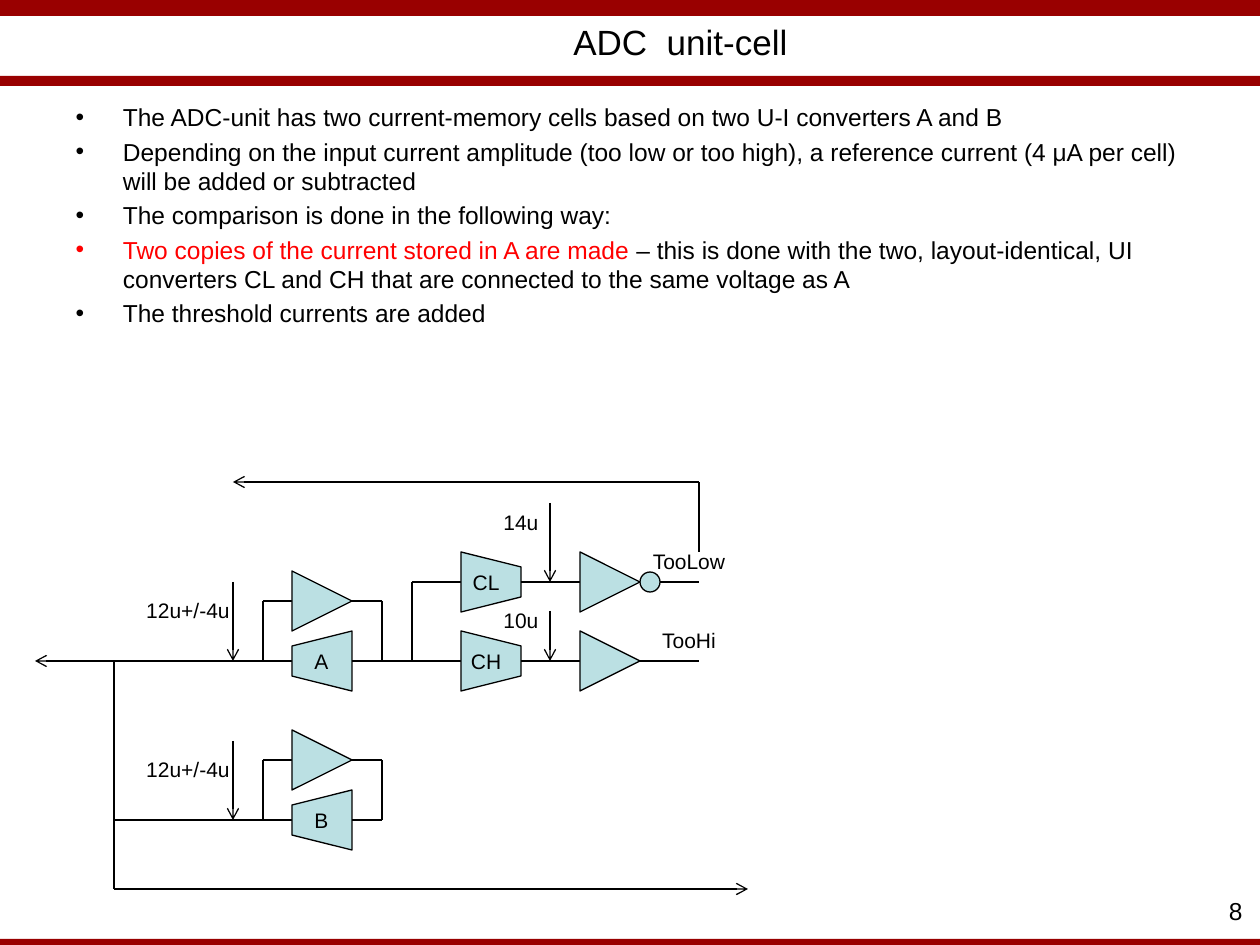
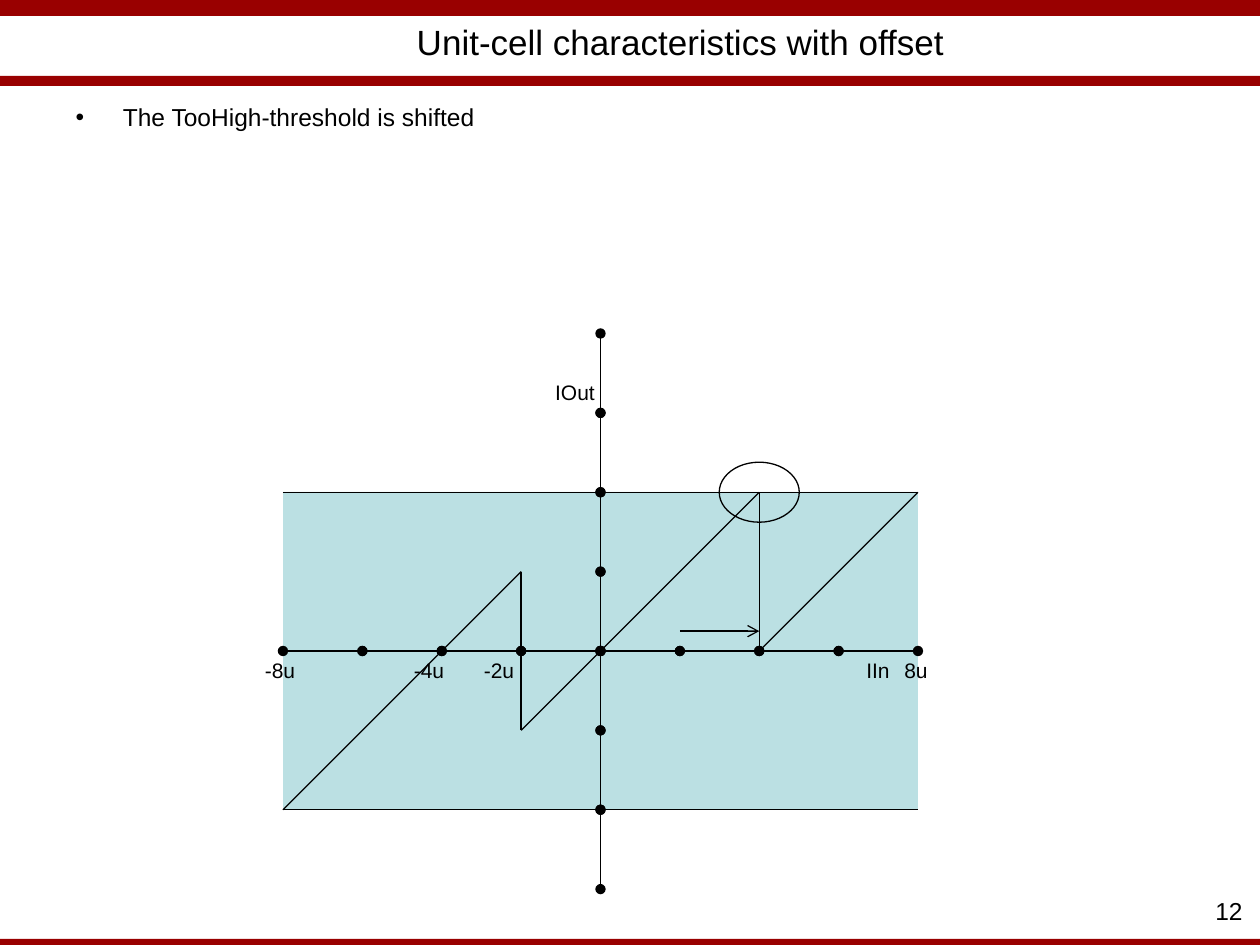
from itertools import pairwise

from lxml import etree
from pptx import Presentation
from pptx.dml.color import RGBColor
from pptx.enum.shapes import MSO_CONNECTOR, MSO_SHAPE
from pptx.enum.text import MSO_ANCHOR, MSO_AUTO_SIZE, PP_ALIGN
from pptx.oxml.ns import qn
from pptx.util import Pt

EMU_PER_PX = 914400 / 126
COLORS = {"band": "990000", "fill": "BBE0E3", "ink": "000000", "accent": "FF0000"}
FONT = "Arial"
TITLE_SIZE, BODY_SIZE, LABEL_SIZE = 20, 14, 12
LINE_WIDTH = Pt(0.75)

STRAIGHT = MSO_CONNECTOR.STRAIGHT
RECT, OVAL = MSO_SHAPE.RECTANGLE, MSO_SHAPE.OVAL
TRIANGLE, TRAPEZOID = MSO_SHAPE.ISOSCELES_TRIANGLE, MSO_SHAPE.TRAPEZOID
CENTER, RIGHT = PP_ALIGN.CENTER, PP_ALIGN.RIGHT
MIDDLE, TOP, NO_FIT = MSO_ANCHOR.MIDDLE, MSO_ANCHOR.TOP, MSO_AUTO_SIZE.NONE

# Diagram measures in px
SIZE = 60          # side of an amplifier or converter
HALF = SIZE // 2
LABEL_HEIGHT = 38
AXIS_LABEL_WIDTH = 80


def px(*lengths):
    return [round(n * EMU_PER_PX) for n in lengths]


def rgb(name):
    return RGBColor.from_string(COLORS[name])


def format_runs(p, size, color="ink"):
    for r in p.runs:
        r.font.name = FONT
        r.font.size = Pt(size)
        r.font.color.rgb = rgb(color)


def write(tf, text, size, align):
    tf.text = text
    p = tf.paragraphs[0]
    p.alignment = align
    format_runs(p, size)


def add_label(slide, x, y, w, text):
    tf = slide.shapes.add_textbox(*px(x, y, w, LABEL_HEIGHT)).text_frame
    tf.word_wrap = False
    write(tf, text, LABEL_SIZE, CENTER)


def add_shape(slide, kind, x, y, w, h, fill="fill", line="ink", rotation=0):
    sp = slide.shapes.add_shape(kind, *px(x, y, w, h))
    sp.shadow.inherit = False
    sp.rotation = rotation
    if fill:
        sp.fill.solid()
        sp.fill.fore_color.rgb = rgb(fill)
    else:
        sp.fill.background()
    if line:
        sp.line.color.rgb = rgb(line)
        sp.line.width = LINE_WIDTH
    else:
        sp.line.fill.background()
    return sp


def add_line(slide, start, end, head=None, tail=None):
    cxn = slide.shapes.add_connector(STRAIGHT, *px(*start, *end))
    cxn.line.color.rgb = rgb("ink")
    cxn.line.width = LINE_WIDTH
    sp_pr = cxn.element.spPr
    ln = sp_pr.find(qn("a:ln"))
    for tag, kind in (("a:headEnd", head), ("a:tailEnd", tail)):
        if kind:
            etree.SubElement(ln, qn(tag), type=kind)
    etree.SubElement(sp_pr, qn("a:effectLst"))


def add_wire(slide, x, y, points, tail=None):
    """Join points, given relative to (x, y), with the tail on the last segment."""
    points = [(x + dx, y + dy) for dx, dy in points]
    segments = list(pairwise(points))
    for start, end in segments[:-1]:
        add_line(slide, start, end)
    add_line(slide, *segments[-1], tail=tail)


def add_amplifier(slide, x, y):
    add_shape(slide, TRIANGLE, x, y, SIZE, SIZE, rotation=90)


def add_converter(slide, x, y, text, rotation, vert):
    """A trapezoid on its side; vert turns its text upright again."""
    sp = add_shape(slide, TRAPEZOID, x, y, SIZE, SIZE, rotation=rotation)
    tf = sp.text_frame
    tf.word_wrap = False
    tf.vertical_anchor = MIDDLE
    write(tf, text, LABEL_SIZE, CENTER)
    sp.element.txBody.find(qn("a:bodyPr")).set("vert", vert)


def add_memory_cell(slide, x, y, text):
    """A converter with amplifier feedback, on a wire that starts at (x, y)."""
    left, right = 178, 178 + SIZE
    add_wire(slide, x, y, [(0, 0), (left, 0)])
    add_wire(slide, x, y, [(119, -79), (119, 0)], tail="arrow")
    add_wire(slide, x, y, [(149, 0), (149, -SIZE), (left, -SIZE)])
    add_wire(slide, x, y, [(right, -SIZE), (268, -SIZE), (268, 0), (right, 0)])
    add_amplifier(slide, x + left, y - SIZE - HALF)
    add_converter(slide, x + left, y - HALF, text, 270, "eaVert")
    add_label(slide, x + 19, y - 70, 110, "12u+/-4u")


def add_comparator(slide, x, y, text, threshold, arrow, label_rise, output):
    """A converter, a threshold current and an amplifier along the row y."""
    add_converter(slide, x, y - HALF, text, 90, "vert270")
    add_wire(slide, x, y, [(SIZE, 0), (119, 0)])
    add_wire(slide, x, y, [(89, -arrow), (89, 0)], tail="arrow")
    add_amplifier(slide, x + 119, y - HALF)
    add_wire(slide, x, y, [(179, 0), (238, 0)])
    add_label(slide, x + 30, y - label_rise, SIZE, threshold)
    add_label(slide, x + 179, y - 40, 98, output)


def add_circuit(slide, x, y):
    bus, low, main, second = x + 79, y + 100, y + 179, y + 338
    add_memory_cell(slide, bus, main, "A")
    add_memory_cell(slide, bus, second, "B")
    add_wire(slide, bus, main, [(0, 0), (-79, 0)], tail="arrow")
    add_wire(slide, bus, main, [(0, 0), (0, 228), (634, 228)], tail="arrow")

    add_wire(slide, x, main, [(317, 0), (426, 0)])
    add_wire(slide, x, main, [(377, 0), (377, -79), (426, -79)])
    add_comparator(slide, x + 426, low, "CL", "14u", 79, 79, "TooLow")
    add_comparator(slide, x + 426, main, "CH", "10u", 50, 60, "TooHi")
    add_shape(slide, OVAL, x + 605, low - 10, 20, 20)
    add_wire(slide, x, y, [(664, 70), (664, 0), (198, 0)], tail="arrow")


def add_characteristic(slide, x, y, w, h):
    """Output against input current, from -8 to 8 and from -4 to 4 microampere."""
    unit = w / 16

    def at(i_in, i_out):
        return x + w / 2 + i_in * unit, y + h / 2 - i_out * unit

    add_shape(slide, RECT, x, y, w, h, line=None)
    for limit in (4, -4):
        add_line(slide, at(-8, limit), at(8, limit))

    axes = ([at(i, 0) for i in range(-8, 9, 2)], [at(0, i) for i in range(-6, 9, 2)])
    for ticks in axes:
        for start, end in pairwise(ticks):
            add_line(slide, start, end, head="oval", tail="oval")

    sawtooth = [(-8, -4), (-2, 2), (-2, -2), (4, 4), (4, 0), (8, 4)]
    for start, end in pairwise(sawtooth):
        add_line(slide, at(*start), at(*end))
    add_line(slide, at(2, 0.5), at(4, 0.5), tail="arrow")

    peak_x, peak_y = at(4, 4)
    add_shape(slide, OVAL, peak_x - 40, peak_y - 30, 80, 60, fill=None)

    labels = [("-8u", -3, 159), ("-4u", 146, 159), ("-2u", 216, 159),
              ("IIn", 595, 159), ("8u", 633, 159), ("IOut", 292, -119)]
    for text, center, top in labels:
        left = x + center - AXIS_LABEL_WIDTH // 2
        add_label(slide, left, y + top, AXIS_LABEL_WIDTH, text)


def move_bands_to_master(prs, slide):
    for top, height in ((939, 10), (0, 16), (76, 10)):
        band = add_shape(slide, RECT, 0, top, 1260, height, "band", None)
        prs.slide_master.shapes.element.append(band.element)


def place(shape, x, y, w, h):
    shape.left, shape.top, shape.width, shape.height = px(x, y, w, h)


def add_slide(prs, number, title, bullets, body_height):
    """Bullets are lists of (text, colour) pairs."""
    slide = prs.slides.add_slide(prs.slide_layouts[1])
    heading, body = slide.shapes.title, slide.placeholders[1]

    place(heading, 164, 17, 1033, 48)
    heading.text_frame.vertical_anchor = MIDDLE
    heading.text_frame.auto_size = NO_FIT
    write(heading.text_frame, title, TITLE_SIZE, CENTER)

    place(body, 63, 96, 1134, body_height)
    tf = body.text_frame
    tf.auto_size = NO_FIT
    for i, parts in enumerate(bullets):
        p = tf.add_paragraph() if i else tf.paragraphs[0]
        for text, _ in parts:
            p.add_run().text = text
        format_runs(p, BODY_SIZE)
        for r, (_, color) in zip(p.runs, parts):
            r.font.color.rgb = rgb(color)

    tf = slide.shapes.add_textbox(*px(1196, 890, 59, 30)).text_frame
    tf.word_wrap = True
    tf.vertical_anchor = TOP
    write(tf, str(number), BODY_SIZE, RIGHT)
    return slide


def main():
    prs = Presentation()
    prs.slide_width, prs.slide_height = px(1260, 945)

    slide = add_slide(prs, 8, "ADC  unit-cell", [
        [("The ADC-unit has two current-memory cells based on two U-I converters "
          "A and B", "ink")],
        [("Depending on the input current amplitude (too low or too high), a "
          "reference current (4 μA per cell) will be added or subtracted", "ink")],
        [("The comparison is done in the following way:", "ink")],
        [("Two copies of the current stored in A are made", "accent"),
         (" – this is done with the two, layout-identical, UI converters CL and CH "
          "that are connected to the same voltage as A", "ink")],
        [("The threshold currents are added", "ink")],
    ], 248)
    move_bands_to_master(prs, slide)
    add_circuit(slide, 35, 482)

    slide = add_slide(prs, 12, "Unit-cell characteristics with offset",
                      [[("The TooHigh-threshold is shifted", "ink")]], 199)
    add_characteristic(slide, 283, 492, 635, 318)

    prs.save("out.pptx")


if __name__ == "__main__":
    main()
